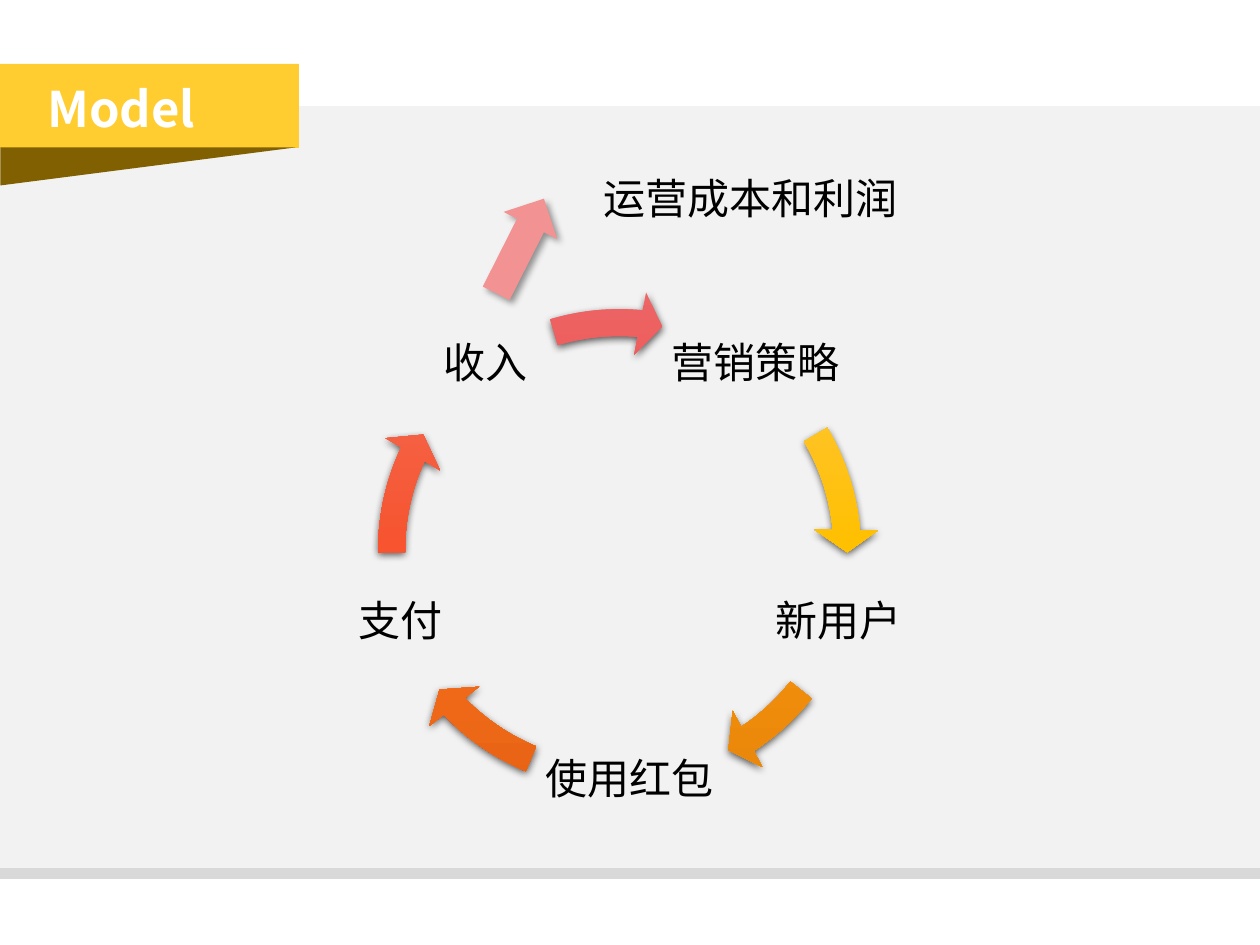
"""Build the Model slide: a ring of five business steps joined by curved arrows."""
from copy import deepcopy

from lxml.etree import SubElement
from pptx import Presentation
from pptx.dml.color import RGBColor
from pptx.enum.shapes import MSO_SHAPE as SHAPE
from pptx.enum.text import MSO_ANCHOR as ANCHOR, PP_ALIGN as ALIGN
from pptx.oxml.ns import qn
from pptx.util import Emu, Pt

PX = 914400 / 126
FONT = "Noto Sans CJK SC"
COLORS = {
    "edge": "D9D9D9", "panel": "F2F2F2", "band": "FFCD2F", "fold": "806000",
    "profit": "F29292", "white": "FFFFFF", "black": "000000",
}
PANELS = [
    (SHAPE.RECTANGLE, (0, 117, 1260, 762), "edge", 0),
    (SHAPE.RECTANGLE, (0, 106, 1260, 762), "panel", 0),
    (SHAPE.RECTANGLE, (-1, 64, 300, 84), "band", 0),
    (SHAPE.RIGHT_TRIANGLE, (129, 19, 38, 295), "fold", 90),
]
TITLE = ("Model", (35, 72, 185, 72))
PROFIT = ("运营成本和利润", (591, 166, 397, 63))
PROFIT_ARROW = (490, 193, 60, 106)
LABEL_HEIGHT, RING_SIZE = 139, 519
STEPS = [
    {"label": "营销策略", "at": (664, 295), "width": 184, "ring": (360, 291),
     "start": 329.44, "end": 354.88, "shades": ("FFC64B", "FFC000", "E3AB00")},
    {"label": "新用户", "at": (751, 553), "width": 176, "ring": (363, 289),
     "start": 38.42, "end": 56.71, "shades": ("FCA04D", "FF960D", "E58509")},
    {"label": "使用红包", "at": (530, 711), "width": 199, "ring": (359, 289),
     "start": 112.58, "end": 136.12, "shades": ("F68452", "FD701C", "E56314")},
    {"label": "支付", "at": (331, 553), "width": 139, "ring": (360, 291),
     "start": 179.52, "end": 204.96, "shades": ("F1705A", "F7542F", "E54520")},
    {"label": "收入", "at": (416, 295), "width": 139, "ring": (360, 291),
     "start": 253.31, "end": 275.22, "shades": ("ED6565", "F14141", "DF3131")},
]


def emu(box):
    return [Emu(round(length * PX)) for length in box]


def add_text(slide, text, box, size=24, color="black", bold=False, wrap=True,
             align=ALIGN.LEFT, anchor=ANCHOR.TOP, inset=None, spacing=None):
    frame = slide.shapes.add_textbox(*emu(box)).text_frame
    frame.word_wrap = wrap
    frame.vertical_anchor = anchor
    if inset is not None:
        inset = Emu(round(inset * PX))
        frame.margin_left = frame.margin_right = inset
        frame.margin_top = frame.margin_bottom = inset
    paragraph = frame.paragraphs[0]
    paragraph.alignment = align
    paragraph.line_spacing = spacing
    run = paragraph.add_run()
    run.text = text
    run.font.size, run.font.bold, run.font.name = Pt(size), bold, FONT
    run.font.color.rgb = RGBColor.from_string(COLORS[color])
    SubElement(run.font._element, qn("a:ea")).set("typeface", FONT)


def add_shape(slide, kind, box, color=None, rotation=0):
    shape = slide.shapes.add_shape(kind, *emu(box))
    shape.rotation = rotation
    shape.shadow.inherit = False
    shape.line.fill.background()
    if color:
        shape.fill.solid()
        shape.fill.fore_color.rgb = RGBColor.from_string(COLORS[color])
    return shape


def cast_shadow(shape, opacity, blur, distance, angle):
    effects = shape._element.spPr.find(qn("a:effectLst"))
    shadow = SubElement(effects, qn("a:outerShdw"), blurRad=str(Pt(blur)),
                        dist=str(Pt(distance)), dir=str(angle * 60000),
                        algn="ctr", rotWithShape="0")
    tint = SubElement(shadow, qn("a:srgbClr"), val=COLORS["black"])
    SubElement(tint, qn("a:alpha"), val=str(opacity * 1000))


def shade(shape, shades):
    shape.fill.gradient()
    shape.fill.gradient_angle = 270
    stops = shape._element.spPr.find(qn("a:gradFill")).find(qn("a:gsLst"))
    stops.append(deepcopy(stops[0]))
    for index, (stop, color) in enumerate(zip(shape.fill.gradient_stops, shades)):
        stop.position = index / 2
        stop.color.rgb = RGBColor.from_string(color)


def add_step(slide, step):
    add_text(slide, step["label"], (*step["at"], step["width"], LABEL_HEIGHT),
             align=ALIGN.CENTER, anchor=ANCHOR.MIDDLE, inset=4, spacing=0.9)
    arrow = add_shape(slide, SHAPE.CIRCULAR_ARROW,
                      (*step["ring"], RING_SIZE, RING_SIZE))
    settings = (0.052, 5.6 * 0.6, step["end"] * 0.6, step["start"] * 0.6, 0.061)
    for index, value in enumerate(settings):
        arrow.adjustments[index] = value
    shade(arrow, step["shades"])
    cast_shadow(arrow, 63, 4.5, 1.5, 90)


def main():
    deck = Presentation()
    deck.slide_width, deck.slide_height = emu((1260, 945))
    slide = deck.slides.add_slide(deck.slide_layouts[6])
    for kind, box, color, rotation in PANELS:
        add_shape(slide, kind, box, color, rotation)
    add_text(slide, *TITLE, size=28, color="white", bold=True, wrap=False)
    for step in STEPS:
        add_step(slide, step)
    profit_arrow = add_shape(slide, SHAPE.DOWN_ARROW, PROFIT_ARROW, "profit", 206.8)
    cast_shadow(profit_arrow, 40, 4, 3, 45)
    add_text(slide, *PROFIT)
    deck.save("out.pptx")


if __name__ == "__main__":
    main()
